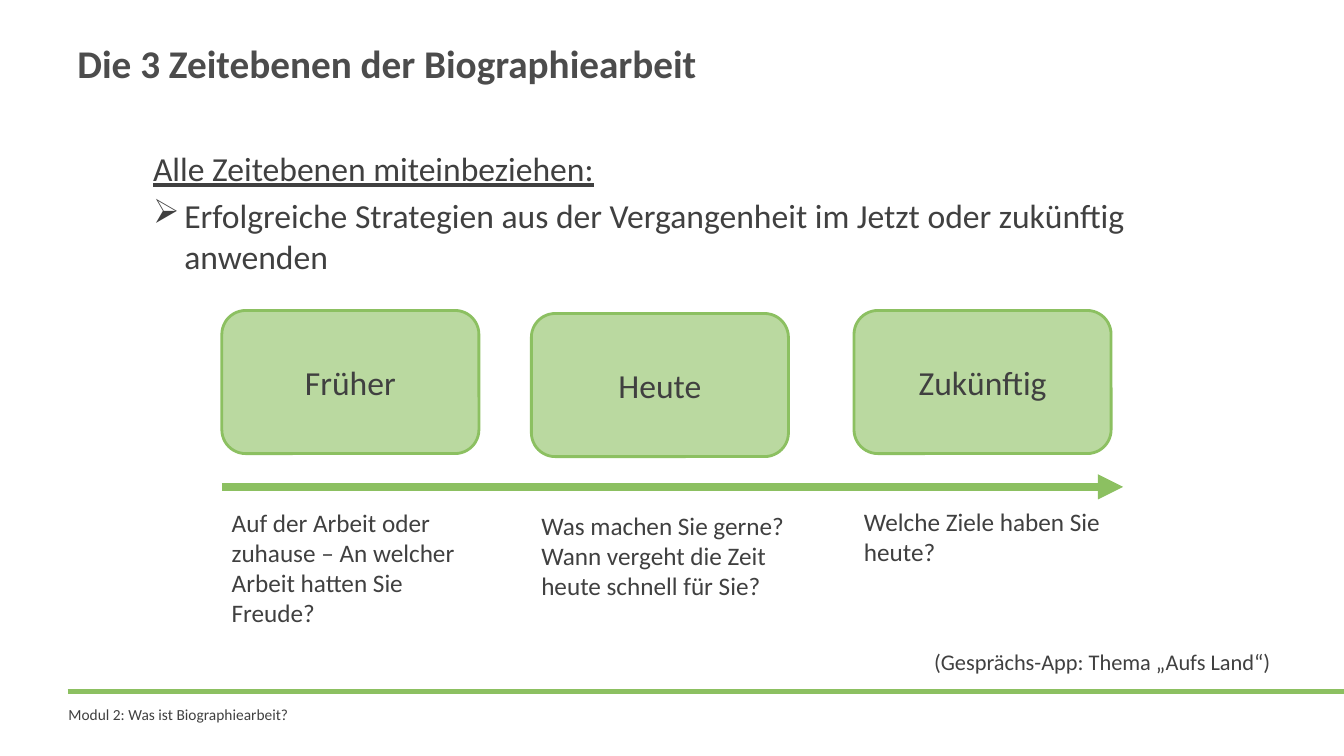
from lxml import etree
from pptx import Presentation
from pptx.dml.color import RGBColor
from pptx.enum.shapes import MSO_CONNECTOR, MSO_SHAPE
from pptx.enum.text import MSO_ANCHOR, PP_ALIGN
from pptx.oxml.ns import qn
from pptx.util import Inches, Pt

STRAIGHT = MSO_CONNECTOR.STRAIGHT
ROUNDED = MSO_SHAPE.ROUNDED_RECTANGLE
TOP, MIDDLE = MSO_ANCHOR.TOP, MSO_ANCHOR.MIDDLE
LEFT, CENTER, RIGHT = PP_ALIGN.LEFT, PP_ALIGN.CENTER, PP_ALIGN.RIGHT

FONT = "Calibri"
COLORS = {"green": "8CC061", "text": "404040", "title": "4C4C4C"}

ERAS = [
    ("Früher", "Auf der Arbeit oder zuhause – An welcher Arbeit hatten Sie Freude?",
     0, 0, 1.9, 2.66),
    ("Heute", "Was machen Sie gerne? Wann vergeht die Zeit heute schnell für Sie?",
     3.07, 0.03, 1.93, 2.79),
    ("Zukünftig", "Welche Ziele haben Sie heute?",
     6.27, 0, 1.89, 2.78),
]


def rgb(name):
    """Return a named colour."""
    return RGBColor.from_string(COLORS[name])


def write(p, text, size=18, color="text", bold=False, underline=False, align=LEFT):
    """Write one formatted run into a paragraph."""
    p.alignment = align
    r = p.add_run()
    r.text = text
    r.font.name = FONT
    r.font.size = Pt(size)
    r.font.bold = bold
    r.font.underline = underline
    r.font.color.rgb = rgb(color)


def add_frame(s, x, y, w, h, anchor=TOP):
    """Add a wrapping text box and return its text frame."""
    box = s.shapes.add_textbox(Inches(x), Inches(y), Inches(w), Inches(h))
    tf = box.text_frame
    tf.word_wrap = True
    tf.vertical_anchor = anchor
    return tf


def add_text(s, x, y, w, h, text, anchor=TOP, **fmt):
    """Add a text box with one paragraph."""
    write(add_frame(s, x, y, w, h, anchor).paragraphs[0], text, **fmt)


def add_line(s, x1, x2, y, width, arrow=False):
    """Add a horizontal green line, optionally with an arrowhead."""
    line = s.shapes.add_connector(STRAIGHT, Inches(x1), Inches(y), Inches(x2), Inches(y))
    line.line.color.rgb = rgb("green")
    line.line.width = Pt(width)
    if arrow:
        etree.SubElement(line.line._get_or_add_ln(), qn("a:tailEnd"), type="triangle")
    etree.SubElement(line._element.spPr, qn("a:effectLst"))


def indent(p, left, first=0, bullet=None):
    """Set paragraph indents in inches and an optional bullet."""
    pPr = p._p.get_or_add_pPr()
    pPr.set("marL", str(Inches(left)))
    pPr.set("indent", str(Inches(first)))
    if bullet:
        etree.SubElement(pPr, qn("a:buChar"), char=bullet)


def add_intro(s, x, y, w, h):
    """Add the underlined lead and its bullet."""
    tf = add_frame(s, x, y, w, h)
    lead = tf.paragraphs[0]
    indent(lead, 0.5)
    write(lead, "Alle Zeitebenen miteinbeziehen:", size=24, underline=True)
    p = tf.add_paragraph()
    p.space_before = Pt(4.8)
    indent(p, 0.81, -0.31, "➢")
    write(p, "Erfolgreiche Strategien aus der Vergangenheit im Jetzt oder zukünftig anwenden",
          size=24)


def add_era(s, x, y, w, h, name):
    """Add one translucent era box."""
    sp = s.shapes.add_shape(ROUNDED, Inches(x), Inches(y), Inches(w), Inches(h))
    sp.shadow.inherit = False
    sp.fill.solid()
    sp.fill.fore_color.rgb = rgb("green")
    fill = sp._element.spPr.find(qn("a:solidFill"))
    etree.SubElement(fill[0], qn("a:alpha"), val="60000")
    sp.line.color.rgb = rgb("green")
    sp.line.width = Pt(2)
    tf = sp.text_frame
    tf.word_wrap = True
    tf.vertical_anchor = MIDDLE
    write(tf.paragraphs[0], name, size=24, align=CENTER)


def add_timeline(s, x, y, w):
    """Add the era boxes, the arrow and the questions below it."""
    for name, question, dx, dy, question_dy, question_w in ERAS:
        add_era(s, x + dx, y + dy, 2.55, 1.42, name)
        add_text(s, x + dx, y + question_dy, question_w, 1.31, question)
    add_line(s, x, x + w, y + 1.75, 6, arrow=True)


def add_footer(s, x, y, right):
    """Add the green rule and the module name."""
    add_line(s, x, right, y, 3)
    add_text(s, x - 0.09, y + 0.09, 7.9, 0.29, "Modul 2: Was ist Biographiearbeit?", size=11)


def main():
    """Build and save the slide."""
    prs = Presentation()
    prs.slide_width, prs.slide_height = Inches(13.33), Inches(7.5)
    s = prs.slides.add_slide(prs.slide_layouts[6])
    add_footer(s, 0.67, 6.86, 13.33)
    add_text(s, 0.67, 0, 12, 1.25, "Die 3 Zeitebenen der Biographiearbeit",
             anchor=MIDDLE, size=28, color="title", bold=True)
    add_intro(s, 0.92, 1.42, 10.56, 2.42)
    add_timeline(s, 2.2, 3.08, 8.94)
    add_text(s, 0.75, 6.38, 11.95, 0.37, "(Gesprächs-App: Thema „Aufs Land“)",
             anchor=MIDDLE, size=16, align=RIGHT)
    prs.save("out.pptx")


if __name__ == "__main__":
    main()
